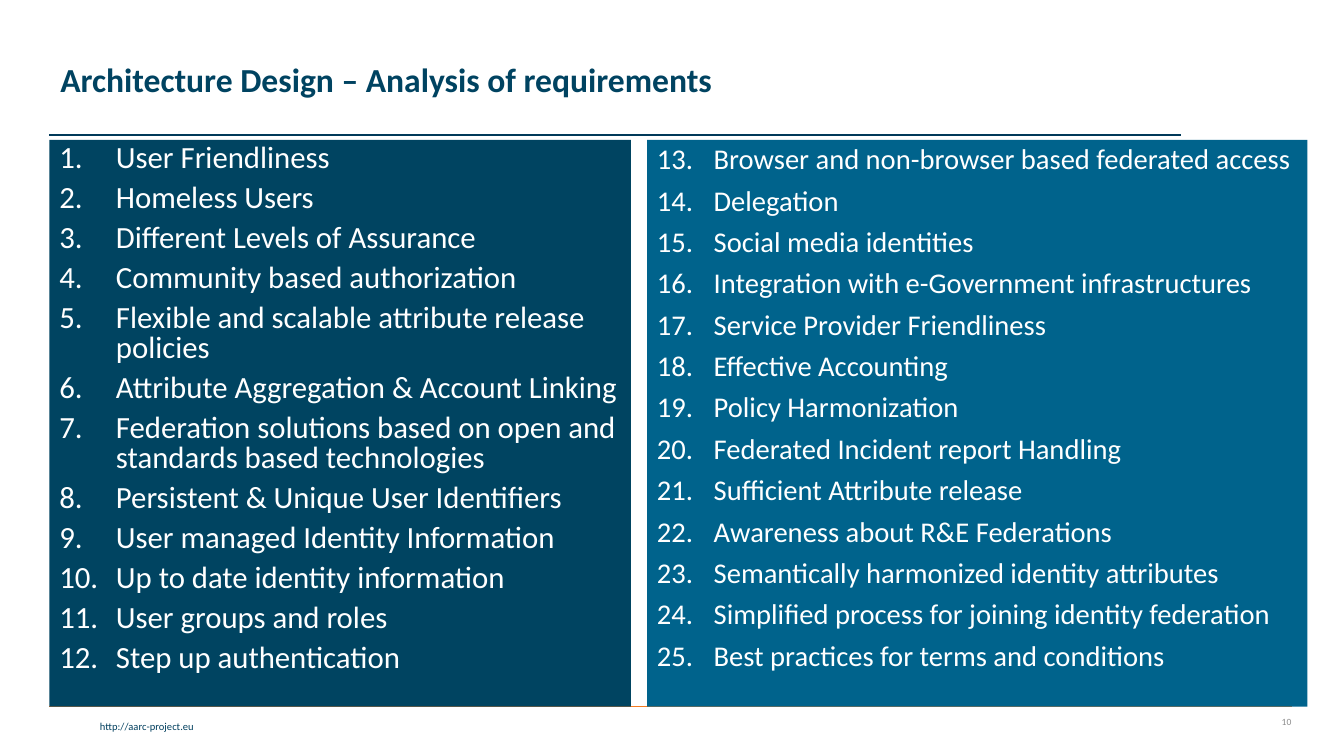
from pptx import Presentation
from pptx.dml.color import RGBColor
from pptx.enum.shapes import MSO_CONNECTOR, MSO_SHAPE
from pptx.enum.text import MSO_ANCHOR, PP_ALIGN
from pptx.oxml.ns import qn
from pptx.util import Pt
from lxml.etree import SubElement

# Content
TITLE = "Architecture Design – Analysis of requirements"
ADDRESS = "http://aarc-project.eu"
PAGE_NUMBER = "10"
FIRST_REQUIREMENTS = [
    "User Friendliness",
    "Homeless Users",
    "Different Levels of Assurance",
    "Community based authorization",
    "Flexible and scalable attribute release policies",
    "Attribute Aggregation & Account Linking",
    "Federation solutions based on open and standards based technologies",
    "Persistent & Unique User Identifiers",
    "User managed Identity Information",
    "Up to date identity information",
    "User groups and roles",
    "Step up authentication",
]
MORE_REQUIREMENTS = [
    "Browser and non-browser based federated access",
    "Delegation",
    "Social media identities",
    "Integration with e-Government infrastructures",
    "Service Provider Friendliness",
    "Effective Accounting",
    "Policy Harmonization",
    "Federated Incident report Handling",
    "Sufficient Attribute release",
    "Awareness about R&E Federations",
    "Semantically harmonized identity attributes",
    "Simplified process for joining identity federation",
    "Best practices for terms and conditions",
]

# Format
COLOURS = {
    "title": "004361", "title rule": "003959", "footer rule": "F57B20",
    "address": "003F5E", "number": "8C8C8C", "text": "FFFFFF",
    "first panel": "004461", "second panel": "00638C",
}
LEFT, PANEL_TOP, PANEL_HEIGHT = 35.3, 100, 404.8
INDENT = 40.5
PANELS = [
    # left, width, fill, requirements, text size, line spacing
    (LEFT, 415.4, "first panel", FIRST_REQUIREMENTS, 22, 0.8),
    (462.2, 471.6, "second panel", MORE_REQUIREMENTS, 20.4, 0.9),
]
RULES = [
    # right end, height on the page, colour
    (923, PANEL_TOP + PANEL_HEIGHT, "footer rule"),
    (843.8, 96.5, "title rule"),
]
LABELS = [
    # text, box, size, colour, bold, alignment, anchor, line spacing
    (ADDRESS, (2.2, 510.5, 143.3, 16.6), 7.5, "address", False,
     PP_ALIGN.RIGHT, MSO_ANCHOR.TOP, 1.0),
    (PAGE_NUMBER, (871.2, 504.7, 58.3, 21.6), 6.8, "number", False,
     PP_ALIGN.RIGHT, MSO_ANCHOR.MIDDLE, 1.0),
    (TITLE, (36, 5.8, 756.7, 104.4), 24, "title", True,
     PP_ALIGN.LEFT, MSO_ANCHOR.MIDDLE, 0.9),
]


def colour(name):
    return RGBColor.from_string(COLOURS[name])


def apply(target, values):
    for name, value in values.items():
        setattr(target, name, value)


def write(para, text, size, colour_name, bold=False):
    span = para.add_run()
    span.text = text
    apply(span.font, {"name": "Calibri", "size": Pt(size), "bold": bold})
    span.font.color.rgb = colour(colour_name)


def number(para, start):
    properties = para._p.get_or_add_pPr()
    properties.set("marL", str(Pt(INDENT)))
    properties.set("indent", str(-Pt(INDENT)))
    SubElement(properties, qn("a:buFont"), typeface="+mj-lt")
    SubElement(properties, qn("a:buAutoNum"), type="arabicPeriod", startAt=str(start))


deck = Presentation()
apply(deck, {"slide_width": Pt(960), "slide_height": Pt(540)})
page = deck.slides.add_slide(deck.slide_layouts[6])

# Rules under the title and above the footer
for right, height, colour_name in RULES:
    rule = page.shapes.add_connector(
        MSO_CONNECTOR.STRAIGHT, Pt(LEFT), Pt(height), Pt(right), Pt(height))
    rule.line.width = Pt(1)
    rule.line.color.rgb = colour(colour_name)
    SubElement(rule._element.spPr, qn("a:effectLst"))

# Numbered panels, counting on from one to the next
start = 1
for left, width, fill, requirements, size, spacing in PANELS:
    panel = page.shapes.add_shape(
        MSO_SHAPE.RECTANGLE, Pt(left), Pt(PANEL_TOP), Pt(width), Pt(PANEL_HEIGHT))
    panel.shadow.inherit = False
    panel.fill.solid()
    panel.fill.fore_color.rgb = colour(fill)
    panel.line.fill.background()
    frame = panel.text_frame
    apply(frame, {"word_wrap": True, "vertical_anchor": MSO_ANCHOR.TOP})
    for index, requirement in enumerate(requirements):
        para = frame.add_paragraph() if index else frame.paragraphs[0]
        number(para, start)
        apply(para, {"alignment": PP_ALIGN.LEFT, "line_spacing": spacing,
                     "space_before": Pt(7.5 if index else 0)})
        write(para, requirement, size, "text")
    start += len(requirements)

# Footer and title
for text, place, size, colour_name, bold, alignment, anchor, spacing in LABELS:
    box = page.shapes.add_textbox(*map(Pt, place))
    apply(box.text_frame, {"word_wrap": True, "vertical_anchor": anchor})
    para = box.text_frame.paragraphs[0]
    apply(para, {"alignment": alignment, "line_spacing": spacing})
    write(para, text, size, colour_name, bold)

deck.save("out.pptx")
